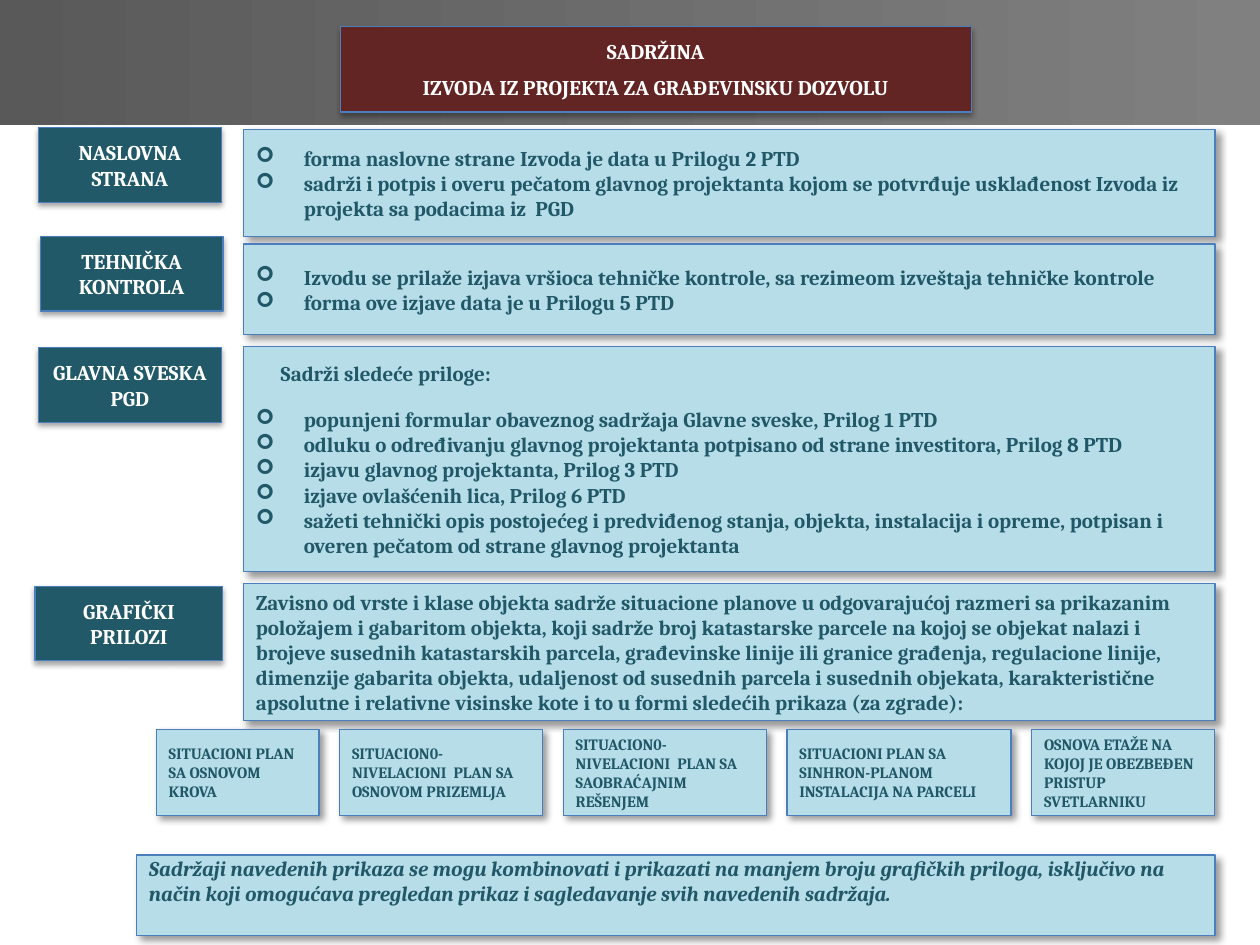
import pptx
import pptx.util
import pptx.dml.color
import pptx.enum.shapes
import pptx.enum.text
import pptx.oxml
import pptx.oxml.ns
from lxml import etree

Pt = pptx.util.Pt
ALIGN = pptx.enum.text.PP_ALIGN
ANCHOR = pptx.enum.text.MSO_ANCHOR

COLORS = {
    "band_start": "595959", "band_end": "808080", "title": "632523",
    "label": "215968", "panel": "B7DEE8", "line": "4B7EBC",
    "dark": "215868", "light": "FFFFFF", "shadow": "000000",
}
SHADOWS = {"label": (35, 3.15, 1.8, 90), "panel": (40, 4, 3, 45)}
FONT = {"name": "Cambria", "size": Pt(12), "bold": True}
SMALL = {**FONT, "size": Pt(9)}
PLAIN = {"space_before": Pt(0), "space_after": Pt(6), "alignment": ALIGN.LEFT}
CENTERED = {**PLAIN, "alignment": ALIGN.CENTER}
ITEM = {**PLAIN, "space_after": Pt(0)}
INTRO = "Sadrži sledeće priloge:"
PANELS = [
    (74, 61.2, [
        "forma naslovne strane Izvoda je data u Prilogu 2 PTD",
        "sadrži i potpis i overu pečatom glavnog projektanta kojom se potvrđuje usklađenost Izvoda iz projekta sa podacima iz  PGD",
    ]),
    (139.5, 51.8, [
        "Izvodu se prilaže izjava vršioca tehničke kontrole, sa rezimeom izveštaja tehničke kontrole",
        "forma ove izjave data je u Prilogu 5 PTD",
    ]),
    (198.2, 128.2, [
        "popunjeni formular obaveznog sadržaja Glavne sveske, Prilog 1 PTD",
        "odluku o određivanju glavnog projektanta potpisano od strane investitora, Prilog 8 PTD",
        "izjavu glavnog projektanta, Prilog 3 PTD",
        "izjave ovlašćenih lica, Prilog 6 PTD",
        "sažeti tehnički opis postojećeg i predviđenog stanja, objekta, instalacija i opreme, potpisan i overen pečatom od strane glavnog projektanta",
    ]),
]
GRAPHICS = "Zavisno od vrste i klase objekta sadrže situacione planove u odgovarajućoj razmeri sa prikazanim položajem i gabaritom objekta, koji sadrže broj katastarske parcele na kojoj se objekat nalazi i brojeve susednih katastarskih parcela, građevinske linije ili granice građenja, regulacione linije, dimenzije gabarita objekta, udaljenost od susednih parcela i susednih objekata, karakteristične apsolutne i relativne visinske kote i to u formi sledećih prikaza (za zgrade):"
LABELS = [
    (22, 73, 104.4, "NASLOVNA STRANA"),
    (23, 135.2, 104.4, "TEHNIČKA KONTROLA"),
    (22, 198.7, 104.4, "GLAVNA SVESKA PGD"),
    (20, 335, 107.3, "GRAFIČKI PRILOZI"),
]
TILES = [
    (93, "SITUACIONI PLAN SA OSNOVOM KROVA"),
    (116, "SITUACION0-NIVELACIONI  PLAN SA OSNOVOM PRIZEMLJA"),
    (116, "SITUACION0-NIVELACIONI  PLAN SA SAOBRAĆAJNIM REŠENJEM"),
    (128, "SITUACIONI PLAN SA SINHRON-PLANOM INSTALACIJA NA PARCELI"),
    (104.5, "OSNOVA ETAŽE NA KOJOJ JE OBEZBEĐEN PRISTUP SVETLARNIKU"),
]
NOTE = "Sadržaji navedenih prikaza se mogu kombinovati i prikazati na manjem broju grafičkih priloga, isključivo na način koji omogućava pregledan prikaz i sagledavanje svih navedenih sadržaja."


def rgb(name):
    """Return the named colour."""
    return pptx.dml.color.RGBColor.from_string(COLORS[name])


def apply(target, values):
    """Set each format value on the target."""
    for name, value in values.items():
        setattr(target, name, value)


def add_rect(s, left, top, width, height):
    """Add a plain rectangle."""
    return s.shapes.add_shape(pptx.enum.shapes.MSO_SHAPE.RECTANGLE,
                              Pt(left), Pt(top), Pt(width), Pt(height))


def place(sp, left, top, width, height):
    """Move and size a placeholder."""
    apply(sp, {"left": Pt(left), "top": Pt(top),
               "width": Pt(width), "height": Pt(height)})
    return sp


def style_box(sp, fill, shadow):
    """Give a box its fill, outline, shadow and text frame settings."""
    sp.fill.solid()
    sp.fill.fore_color.rgb = rgb(fill)
    sp.line.color.rgb = rgb("line")
    sp.line.width = Pt(0.75)
    alpha, blur, dist, angle = SHADOWS[shadow]
    qn = pptx.oxml.ns.qn
    props = sp._element.spPr
    effects = etree.SubElement(props, qn("a:effectLst"))
    outer = etree.SubElement(effects, qn("a:outerShdw"), {
        "blurRad": str(int(Pt(blur))), "dist": str(int(Pt(dist))),
        "dir": str(angle * 60000), "algn": "ctr", "rotWithShape": "0"})
    color = etree.SubElement(outer, qn("a:srgbClr"), val=COLORS["shadow"])
    etree.SubElement(color, qn("a:alpha"), val=str(alpha * 1000))
    apply(sp.text_frame, {
        "word_wrap": True, "vertical_anchor": ANCHOR.MIDDLE,
        "auto_size": pptx.enum.text.MSO_AUTO_SIZE.NONE})


def add_text(sp, text, layout, font, color, bullet=None, margin=0):
    """Write one paragraph, reusing the empty first one."""
    tf = sp.text_frame
    p = tf.paragraphs[0]
    if p.runs:
        p = tf.add_paragraph()
    pPr = p._p.get_or_add_pPr()
    hang = 27.4 if bullet else 0
    pPr.set("marL", str(int(Pt(hang or margin))))
    pPr.set("indent", str(-int(Pt(hang))))
    qn = pptx.oxml.ns.qn
    if bullet:
        etree.SubElement(pPr, qn("a:buFont"), typeface="Wingdings")
        etree.SubElement(pPr, qn("a:buChar"), char=bullet)
    else:
        etree.SubElement(pPr, qn("a:buNone"))
    apply(p, layout)
    r = p.add_run()
    r.text = text
    apply(r.font, font)
    r.font.color.rgb = rgb(color)
    return p


def add_box(s, frame, text, fill, shadow, layout, font, color):
    """Add a styled rectangle with one paragraph."""
    sp = add_rect(s, *frame)
    style_box(sp, fill, shadow)
    add_text(sp, text, layout, font, color)
    return sp


def add_band(s):
    """Add the gradient band behind the title."""
    sp = add_rect(s, 0, 0, 720, 71.4)
    sp.shadow.inherit = False
    sp.line.fill.background()
    sp.fill.gradient()
    sp.fill.gradient_angle = 0
    for stop, name in zip(sp.fill.gradient_stops, ("band_start", "band_end")):
        stop.color.rgb = rgb(name)
    s.shapes._spTree.insert(2, sp._element)


def fill_title(s):
    """Format and fill the title placeholder."""
    sp = place(s.shapes.title, 194.4, 15, 360.6, 49)
    style_box(sp, "title", "label")
    for text in ("SADRŽINA", "IZVODA IZ PROJEKTA ZA GRAĐEVINSKU DOZVOLU"):
        add_text(sp, text, CENTERED, FONT, "light")


def fill_panels(s):
    """Format and fill the four body placeholders."""
    bodies = [sp for sp in s.placeholders if sp.placeholder_format.idx]
    frames = [(top, height) for top, height, _ in PANELS] + [(333.4, 78.5)]
    for sp, (top, height) in zip(bodies, frames):
        place(sp, 139, top, 555.3, height)
        style_box(sp, "panel", "panel")
    for sp, (_, _, items) in zip(bodies, PANELS):
        first_gap = Pt(0)
        if items is PANELS[-1][2]:
            add_text(sp, INTRO, PLAIN, FONT, "dark", margin=14.2)
            first_gap = Pt(6)
        for i, item in enumerate(items):
            p = add_text(sp, item, ITEM, FONT, "dark", bullet="➢")
            if i == 0:
                p.space_before = first_gap
    add_text(bodies[-1], GRAPHICS, PLAIN, FONT, "dark")


def main():
    """Build the slide and save it."""
    prs = pptx.Presentation()
    prs.slide_width, prs.slide_height = Pt(720), Pt(540)
    s = prs.slides.add_slide(prs.slide_layouts.get_by_name("Comparison"))
    add_band(s)
    fill_title(s)
    fill_panels(s)
    for left, top, width, text in LABELS:
        add_box(s, (left, top, width, 42.6), text,
                "label", "label", CENTERED, FONT, "light")
    left = 89.3
    for width, text in TILES:
        add_box(s, (left, 416.8, width, 49.2), text,
                "panel", "panel", PLAIN, SMALL, "dark")
        left += width + 11.8
    note = add_box(s, (78, 488.6, 616.3, 46), NOTE, "panel", "panel",
                   PLAIN, {**FONT, "italic": True}, "dark")
    apply(note.text_frame, {"vertical_anchor": ANCHOR.TOP, "margin_top": Pt(0)})
    prs.save("out.pptx")


if __name__ == "__main__":
    main()
